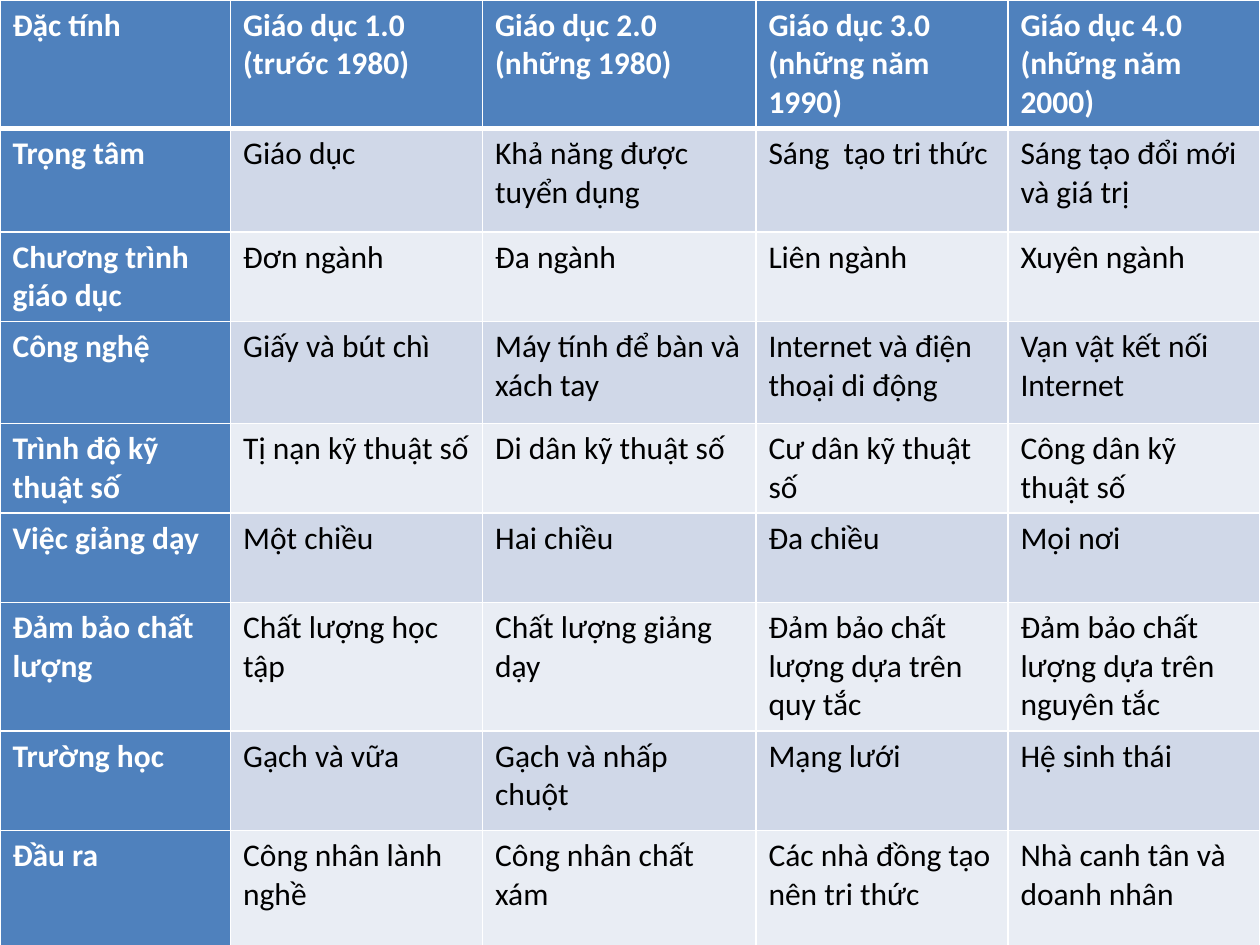
from dataclasses import dataclass

import lxml.etree
import pptx
import pptx.dml.color
import pptx.oxml.ns
import pptx.table
import pptx.util

Inches = pptx.util.Inches


@dataclass(frozen=True)
class Theme:
    font: str = "Calibri"
    text_size: int = 18
    heading_fill: str = "4F81BD"
    band_fills: tuple[str, str] = ("D0D8E8", "E9EDF4")
    heading_text: str = "FFFFFF"
    body_text: str = "000000"
    border: str = "FFFFFF"
    thin_border: int = 1
    thick_border: int = 3


@dataclass(frozen=True)
class TableRow:
    height: float
    texts: tuple[str, ...]


THEME = Theme()
COLUMN_WIDTHS = (1.83, 2, 2.17, 2, 2)
ROWS = (
    TableRow(1.02, ("Đặc tính", "Giáo dục 1.0 (trước 1980)", "Giáo dục 2.0 (những 1980)",
                    "Giáo dục 3.0 (những năm 1990)", "Giáo dục 4.0 (những năm 2000)")),
    TableRow(0.82, ("Trọng tâm", "Giáo dục", "Khả năng được tuyển dụng",
                    "Sáng  tạo tri thức", "Sáng tạo đổi mới và giá trị")),
    TableRow(0.71, ("Chương trình giáo dục", "Đơn ngành", "Đa ngành",
                    "Liên ngành", "Xuyên ngành")),
    TableRow(0.81, ("Công nghệ", "Giấy và bút chì", "Máy tính để bàn và xách tay",
                    "Internet và điện thoại di động", "Vạn vật kết nối Internet")),
    TableRow(0.71, ("Trình độ kỹ thuật số", "Tị nạn kỹ thuật số", "Di dân kỹ thuật số",
                    "Cư dân kỹ thuật số", "Công dân kỹ thuật số")),
    TableRow(0.71, ("Việc giảng dạy", "Một chiều", "Hai chiều", "Đa chiều", "Mọi nơi")),
    TableRow(1.02, ("Đảm bảo chất lượng", "Chất lượng học tập", "Chất lượng giảng dạy",
                    "Đảm bảo chất lượng dựa trên quy tắc",
                    "Đảm bảo chất lượng dựa trên nguyên tắc")),
    TableRow(0.79, ("Trường học", "Gạch và vữa", "Gạch và nhấp chuột",
                    "Mạng lưới", "Hệ sinh thái")),
    TableRow(1.02, ("Đầu ra", "Công nhân lành nghề", "Công nhân chất xám",
                    "Các nhà đồng tạo nên tri thức", "Nhà canh tân và doanh nhân")),
)


def rgb(color: str) -> pptx.dml.color.RGBColor:
    return pptx.dml.color.RGBColor.from_string(color)


def set_borders(cell: pptx.table._Cell, widths: dict[str, int]) -> None:
    """Add a solid line per side; the schema wants them ahead of the fill."""
    qn = pptx.oxml.ns.qn
    properties = cell._tc.get_or_add_tcPr()
    for position, (side, width) in enumerate(widths.items()):
        line = lxml.etree.Element(qn(f"a:ln{side}"), w=str(pptx.util.Pt(width)))
        fill = lxml.etree.SubElement(line, qn("a:solidFill"))
        lxml.etree.SubElement(fill, qn("a:srgbClr"), val=THEME.border)
        properties.insert(position, line)


def fill_cell(cell: pptx.table._Cell, text: str, row: int, column: int) -> None:
    heading = row == 0 or column == 0
    cell.fill.solid()
    cell.fill.fore_color.rgb = rgb(
        THEME.heading_fill if heading else THEME.band_fills[(row - 1) % 2])

    span = cell.text_frame.paragraphs[0].add_run()
    span.text = text
    span.font.color.rgb = rgb(THEME.heading_text if heading else THEME.body_text)
    text_format = {"name": THEME.font, "size": pptx.util.Pt(THEME.text_size), "bold": heading}
    for name, value in text_format.items():
        setattr(span.font, name, value)

    widths = dict.fromkeys("LRTB", THEME.thin_border)
    if row == 0:
        widths["B"] = THEME.thick_border
    elif row == 1:
        widths["T"] = THEME.thick_border
    set_borders(cell, widths)


def main() -> None:
    deck = pptx.Presentation()
    deck.slide_width, deck.slide_height = Inches(10), Inches(7.5)
    page = deck.slides.add_slide(deck.slide_layouts[6])
    table = page.shapes.add_table(
        len(ROWS), len(COLUMN_WIDTHS), Inches(0), Inches(0),
        Inches(sum(COLUMN_WIDTHS)), Inches(sum(row.height for row in ROWS))).table
    table.first_col = True

    for column, width in zip(table.columns, COLUMN_WIDTHS):
        column.width = Inches(width)
    for row_index, row in enumerate(ROWS):
        table.rows[row_index].height = Inches(row.height)
        for column_index, text in enumerate(row.texts):
            fill_cell(table.cell(row_index, column_index), text, row_index, column_index)

    deck.save("out.pptx")


if __name__ == "__main__":
    main()
